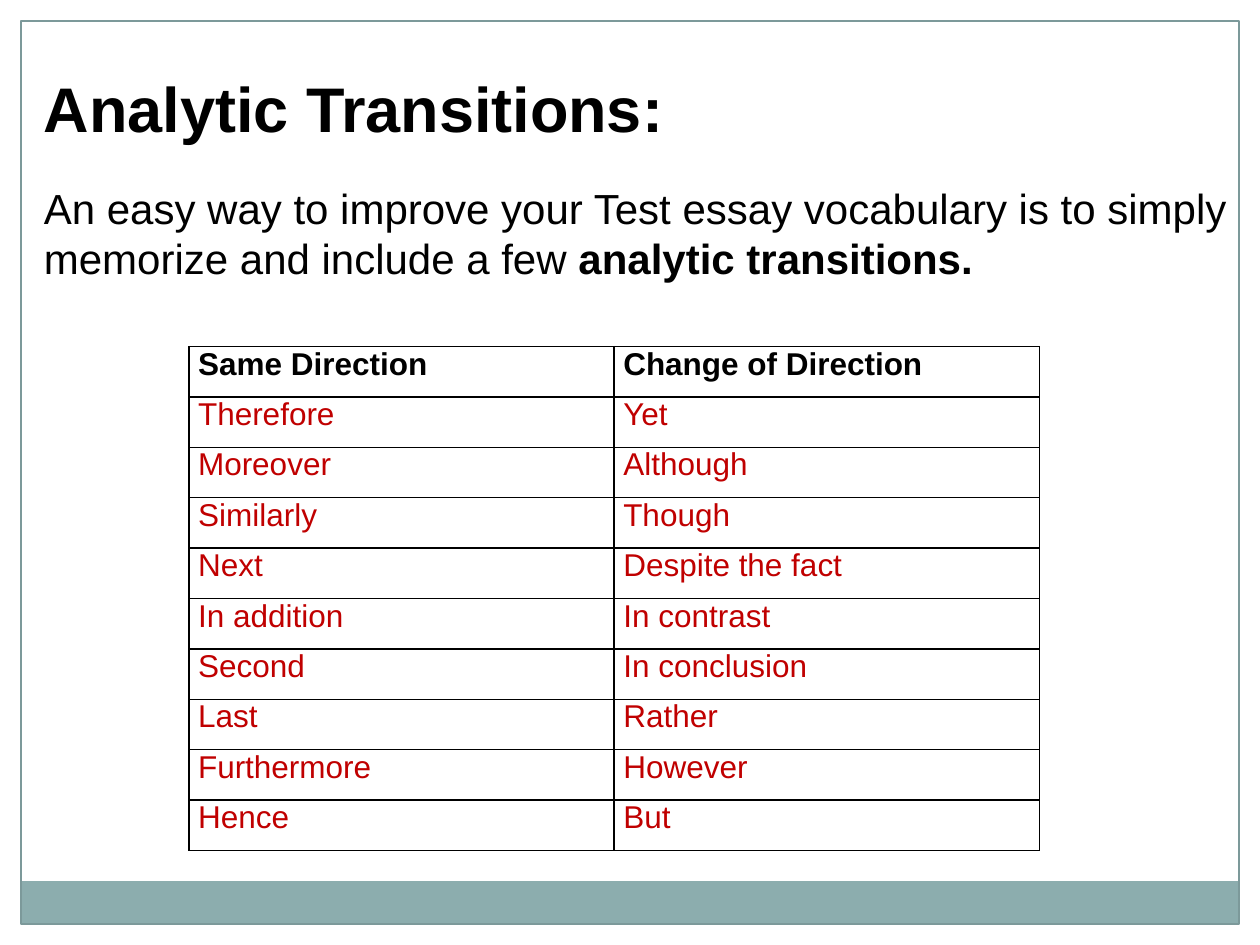
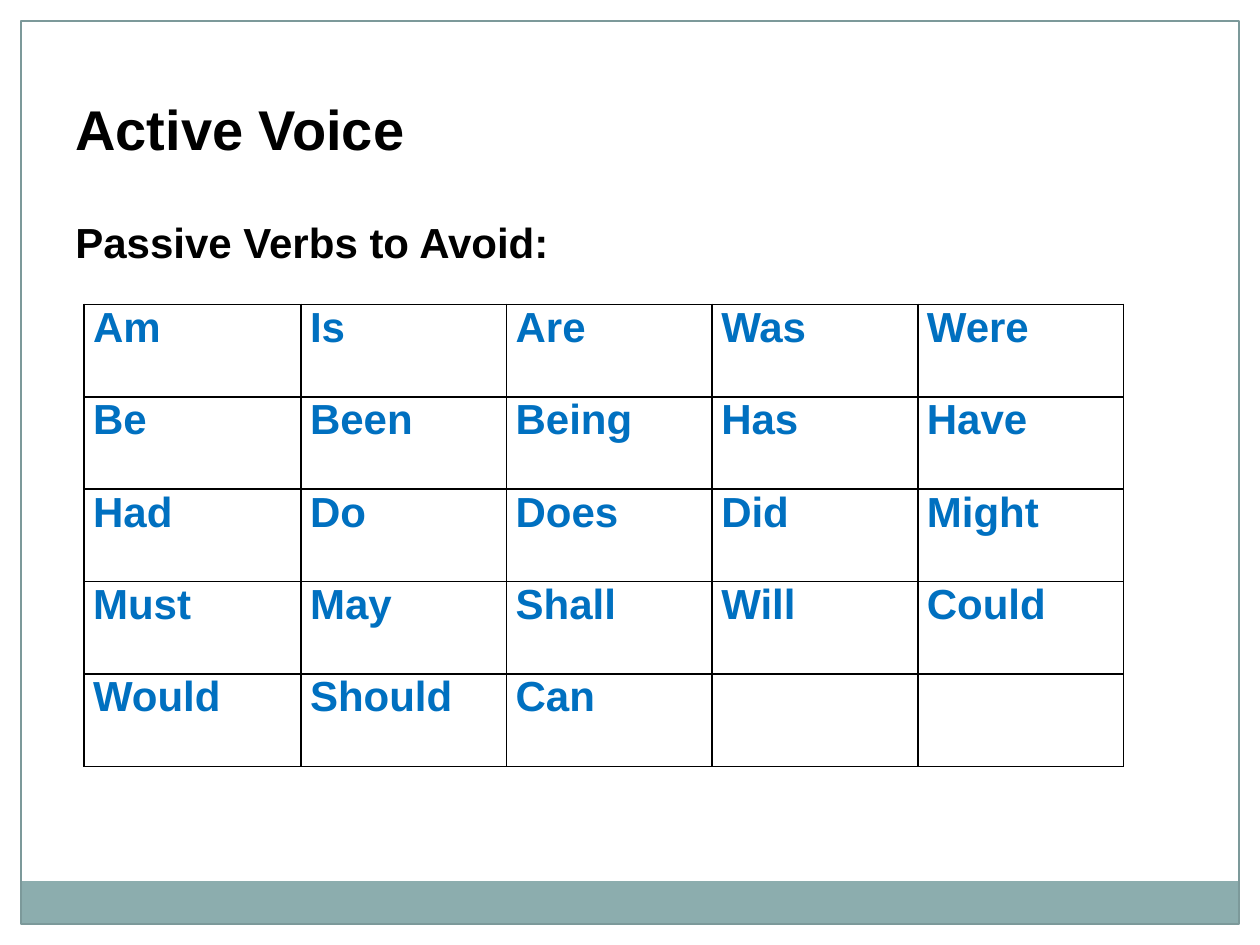
"""Build two writing-tip slides, each with a heading, a lead line and a word table."""
import lxml.etree
import pptx
import pptx.dml.color
import pptx.enum.shapes
import pptx.enum.text
import pptx.oxml.ns
import pptx.util

Pt = pptx.util.Pt
Anchor = pptx.enum.text.MSO_ANCHOR

COLORS = {
    "paper": "FFFFFF",
    "band": "8CADAE",
    "frame": "7C999A",
    "ink": "000000",
    "red": "C00000",
    "blue": "0070C0",
}
FONT = "Arial"
PAGE_WIDTH, PAGE_HEIGHT = 720, 540
MARGIN = 12
BAND_HEIGHT = 24.5

TRANSITIONS = [
    ("Same Direction", "Change of Direction"),
    ("Therefore", "Yet"),
    ("Moreover", "Although"),
    ("Similarly", "Though"),
    ("Next", "Despite the fact"),
    ("In addition", "In contrast"),
    ("Second", "In conclusion"),
    ("Last", "Rather"),
    ("Furthermore", "However"),
    ("Hence", "But"),
]
PASSIVE_VERBS = [
    ("Am", "Is", "Are", "Was", "Were"),
    ("Be", "Been", "Being", "Has", "Have"),
    ("Had", "Do", "Does", "Did", "Might"),
    ("Must", "May", "Shall", "Will", "Could"),
    ("Would", "Should", "Can", "", ""),
]


def rgb(name):
    return pptx.dml.color.RGBColor.from_string(COLORS[name])


def style_font(font, size, color, bold):
    font.name = FONT
    font.size = Pt(size)
    font.bold = bold
    font.color.rgb = rgb(color)


def add_rectangle(page, box, fill=None, line=None):
    shape = page.shapes.add_shape(
        pptx.enum.shapes.MSO_SHAPE.RECTANGLE, *map(Pt, box))
    shape.shadow.inherit = False
    if fill:
        shape.fill.solid()
        shape.fill.fore_color.rgb = rgb(fill)
    else:
        shape.fill.background()
    if line:
        shape.line.color.rgb = rgb(line)
        shape.line.width = Pt(0.75)
    else:
        shape.line.fill.background()


def add_page_frame(page, box):
    left, top, width, height = box
    inner_width, inner_height = width - 2 * MARGIN, height - 2 * MARGIN
    bottom = top + height - MARGIN
    add_rectangle(page, (left, top, width, MARGIN), fill="paper")
    for edge in (left + width - MARGIN, left):
        add_rectangle(page, (edge, top, MARGIN, height), fill="paper")
    add_rectangle(
        page, (left + MARGIN, bottom - BAND_HEIGHT, inner_width, BAND_HEIGHT), fill="band")
    add_rectangle(
        page, (left + MARGIN, top + MARGIN, inner_width, inner_height), line="frame")


def add_text(page, box, text, size, bold=True, anchor=Anchor.TOP):
    frame = page.shapes.add_textbox(*map(Pt, box)).text_frame
    frame.word_wrap = True
    frame.vertical_anchor = anchor
    para = frame.paragraphs[0]
    style_font(para.font, size, "ink", bold)
    para.add_run().text = text
    return para


def set_cell_borders(cell):
    properties = cell._tc.get_or_add_tcPr()
    qn = pptx.oxml.ns.qn
    for side in ("lnL", "lnR", "lnT", "lnB"):
        line = lxml.etree.SubElement(properties, qn(f"a:{side}"), w=str(Pt(1)))
        fill = lxml.etree.SubElement(line, qn("a:solidFill"))
        lxml.etree.SubElement(fill, qn("a:srgbClr"), val=COLORS["ink"])


def add_word_table(page, box, rows, column_widths, size, color, bold, header=False):
    table = page.shapes.add_table(
        len(rows), len(column_widths), *map(Pt, box)).table
    table.first_row = table.horz_banding = False
    for column, width in zip(table.columns, column_widths):
        column.width = Pt(width)
    for row_index, words in enumerate(rows):
        table.rows[row_index].height = Pt(box[3] / len(rows))
        is_header = header and row_index == 0
        for cell, word in zip(table.rows[row_index].cells, words):
            set_cell_borders(cell)
            cell.fill.background()
            cell.margin_left = cell.margin_right = Pt(5.2)
            cell.margin_top = cell.margin_bottom = 0
            para = cell.text_frame.paragraphs[0]
            if word:
                para.add_run().text = word
            style_font(para.font, size, "ink" if is_header else color, bold or is_header)


def build_transitions_page(page, box):
    left, top, width, height = box
    add_page_frame(page, box)
    add_text(page, (left + 18, top + 36, 444, 50.5), "Analytic Transitions:", 36)
    add_word_table(page, (left + 108, top + 198, 486, 288), TRANSITIONS,
                   [243] * 2, 18, "red", bold=False, header=True)
    lead = add_text(
        page, (left + 18, top + 100.5, width, 65),
        "An easy way to improve your Test essay vocabulary is to simply "
        "memorize and include a few ",
        24, bold=False, anchor=Anchor.MIDDLE)
    span = lead.add_run()
    span.text = "analytic transitions."
    span.font.bold = True


def build_active_voice_page(page, box):
    left, top, width, height = box
    add_page_frame(page, box)
    add_text(page, (left + 36, top + 24, width - 72, 72), "Active Voice", 32,
             anchor=Anchor.BOTTOM)
    add_text(page, (left + 36, top + 120, 288, 42), "Passive Verbs to Avoid:", 24)
    add_word_table(page, (left + 48, top + 174, 594, 264), PASSIVE_VERBS,
                   [124] + [117.5] * 4, 24, "blue", bold=True)


def main():
    deck = pptx.Presentation()
    deck.slide_width, deck.slide_height = Pt(PAGE_WIDTH), Pt(PAGE_HEIGHT)
    for build_page in (build_transitions_page, build_active_voice_page):
        page = deck.slides.add_slide(deck.slide_layouts[6])
        build_page(page, (0, 0, PAGE_WIDTH, PAGE_HEIGHT))
    deck.save("out.pptx")


if __name__ == "__main__":
    main()
